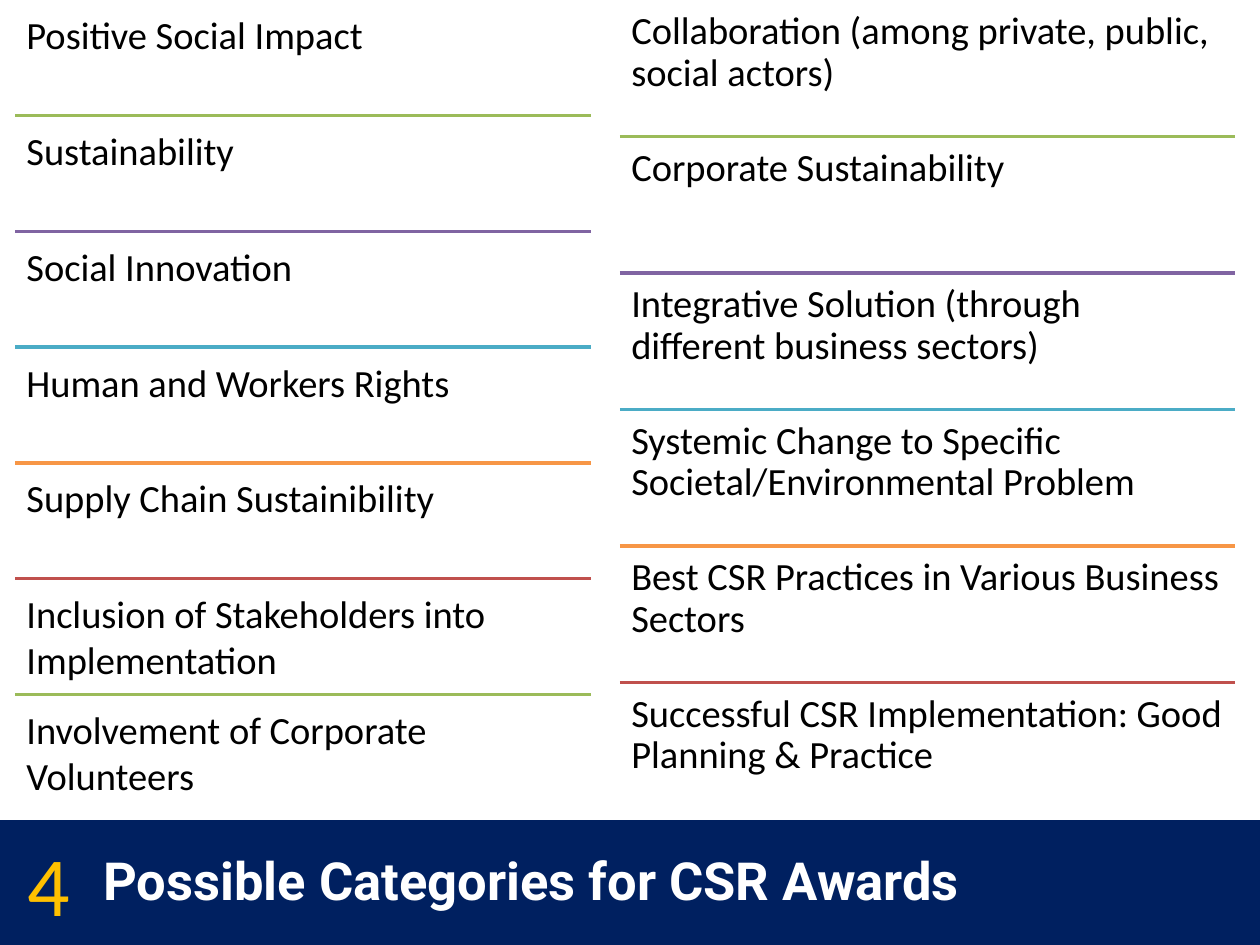
"""Build the slide of possible categories for CSR awards."""
from lxml.etree import SubElement
from pptx import Presentation
from pptx.dml.color import RGBColor
from pptx.enum.shapes import MSO_CONNECTOR as Connector, MSO_SHAPE as Shape
from pptx.enum.text import MSO_ANCHOR as Anchor, MSO_AUTO_SIZE as AutoSize, PP_ALIGN as Align
from pptx.oxml.ns import qn
from pptx.util import Inches, Pt

NAVY = RGBColor(0x00, 0x20, 0x60)
GOLD = RGBColor(0xFF, 0xC0, 0x00)
WHITE = RGBColor(0xFF, 0xFF, 0xFF)
BLACK = RGBColor(0x00, 0x00, 0x00)
GREEN = RGBColor(0x9B, 0xBB, 0x59)
PURPLE = RGBColor(0x80, 0x64, 0xA2)
TEAL = RGBColor(0x4B, 0xAC, 0xC6)
ORANGE = RGBColor(0xF7, 0x96, 0x46)
RED = RGBColor(0xC0, 0x50, 0x4D)
RULE_COLORS = [GREEN, PURPLE, TEAL, ORANGE, RED]

SLIDE_W, SLIDE_H = 10, 7.5
BAND_TOP = 6.51
INSET = 0.09

TITLE = "Possible Categories for CSR Awards"
NUMBER = "4"
COLUMNS = [
    {
        "left": 0.12, "width": 4.57, "height": 6.43, "line_spacing": 1.0,
        "categories": [
            "Positive Social Impact",
            "Sustainability",
            "Social Innovation",
            "Human and Workers Rights",
            "Supply Chain Sustainibility",
            "Inclusion of Stakeholders into Implementation",
            "Involvement of Corporate Volunteers",
        ],
    },
    {
        "left": 4.92, "width": 4.88, "height": 6.5, "line_spacing": 0.9,
        "categories": [
            "Collaboration (among private, public, social actors)",
            "Corporate Sustainability",
            "Integrative Solution (through different business sectors)",
            "Systemic Change to Specific Societal/Environmental Problem",
            "Best CSR Practices in Various Business Sectors",
            "Successful CSR Implementation: Good Planning & Practice",
        ],
    },
]


def set_font(paragraph, name, size, color, bold=False):
    font = paragraph.font
    font.name, font.size, font.bold = name, Pt(size), bold
    font.color.rgb = color


def add_rule(shapes, left, right, y, color):
    rule = shapes.add_connector(
        Connector.STRAIGHT, Inches(left), Inches(y), Inches(right), Inches(y))
    rule.line.color.rgb = color
    rule.line.width = Pt(2)
    SubElement(rule.element.spPr, qn("a:effectLst"))


def add_category(shapes, text, left, top, width, height, line_spacing):
    category = shapes.add_textbox(Inches(left), Inches(top), Inches(width), Inches(height))
    frame = category.text_frame
    frame.word_wrap = True
    frame.margin_left = frame.margin_right = Inches(INSET)
    frame.margin_top = frame.margin_bottom = Inches(INSET)
    paragraph = frame.paragraphs[0]
    paragraph.text = text
    paragraph.line_spacing = line_spacing
    paragraph.space_after = Pt(6)
    set_font(paragraph, "Calibri", 22, BLACK)


def add_column(slide, left, width, height, line_spacing, categories):
    shapes = slide.shapes.add_group_shape().shapes
    row_height = height / len(categories)
    for row, text in enumerate(categories):
        top = row * row_height
        if row:
            color = RULE_COLORS[(row - 1) % len(RULE_COLORS)]
            add_rule(shapes, left, left + width, top, color)
        add_category(shapes, text, left, top, width, row_height, line_spacing)


def add_heading(slide):
    band = slide.shapes.add_shape(
        Shape.RECTANGLE, 0, Inches(BAND_TOP), Inches(SLIDE_W), Inches(SLIDE_H - BAND_TOP))
    band.shadow.inherit = False
    band.fill.solid()
    band.fill.fore_color.rgb = NAVY
    band.line.fill.background()

    title = slide.shapes.title
    title.element.addprevious(band.element)
    title.left, title.top = Inches(0.72), Inches(BAND_TOP)
    title.width, title.height = Inches(9.28), Inches(0.94)
    title.text_frame.vertical_anchor = Anchor.MIDDLE
    title.text_frame.auto_size = AutoSize.NONE
    heading = title.text_frame.paragraphs[0]
    heading.text = TITLE
    heading.alignment = Align.LEFT
    heading.space_before = Pt(6)
    set_font(heading, "Roboto", 30, WHITE, bold=True)

    number = slide.shapes.add_textbox(Inches(0.12), Inches(6.56), Inches(0.61), Inches(0.91))
    number.text_frame.word_wrap = False
    number.text_frame.auto_size = AutoSize.SHAPE_TO_FIT_TEXT
    digit = number.text_frame.paragraphs[0]
    digit.text = NUMBER
    set_font(digit, "Calibri", 48, GOLD)


def main():
    deck = Presentation()
    deck.slide_width, deck.slide_height = Inches(SLIDE_W), Inches(SLIDE_H)
    slide = deck.slides.add_slide(deck.slide_layouts[5])
    add_heading(slide)
    for column in COLUMNS:
        add_column(slide, **column)
    deck.save("out.pptx")


if __name__ == "__main__":
    main()
